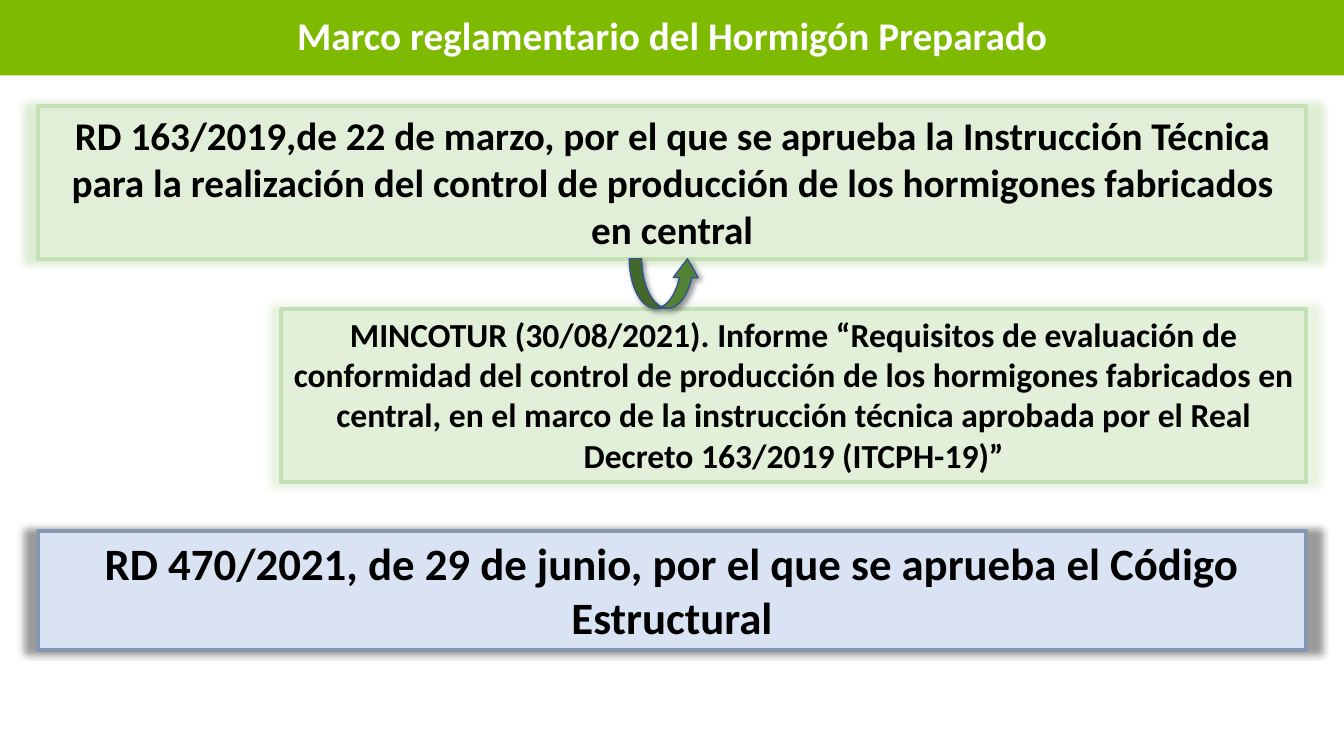
from lxml.etree import SubElement
from pptx import Presentation
from pptx.dml.color import RGBColor
from pptx.enum.shapes import MSO_SHAPE
from pptx.enum.text import MSO_ANCHOR, MSO_AUTO_SIZE, PP_ALIGN
from pptx.oxml.ns import qn
from pptx.util import Cm, Pt


def color(code):
    return RGBColor.from_string(code)


def block(kind, box, fill, line=None, width=0, glow=None, blur=5, **extra):
    shape = slide.shapes.add_shape(kind, *[Cm(n) for n in box])
    shape._element.remove(shape._element.find(qn("p:style")))
    shape.fill.solid()
    shape.fill.fore_color.rgb = color(fill)
    if line:
        shape.line.color.rgb = color(line)
        shape.line.width = Pt(width)
    else:
        shape.line.fill.background()
    shape.shadow.inherit = False
    if glow:
        effects = shape._element.spPr.find(qn("a:effectLst"))
        outer = SubElement(effects, qn("a:outerShdw"), blurRad=str(Pt(blur)), **extra)
        tint = SubElement(outer, qn("a:srgbClr"), val=glow)
        SubElement(tint, qn("a:alpha"), val="40000")
    return shape


deck = Presentation()
deck.slide_width, deck.slide_height = Cm(33.87), Cm(19.05)
slide = deck.slides.add_slide(deck.slide_layouts[6])

title = block(MSO_SHAPE.RECTANGLE, (0, 0, 33.87, 1.9), "7DBA00")
frame = title.text_frame
frame.word_wrap = True
frame.vertical_anchor = MSO_ANCHOR.MIDDLE
head = frame.paragraphs[0]
head.text = "Marco reglamentario del Hormigón Preparado"
head.line_spacing = 0.9
texts = [(head, 28, "FFFFFF")]

right = 32.92
rules = [
    (0.96, 2.67, 3.85, "E2F0D9", "C5E0B4", "A9D18E", 94, 28,
     "RD 163/2019,de 22 de marzo, por el que se aprueba la Instrucción Técnica "
     "para la realización del control de producción de los hormigones fabricados en central"),
    (7.09, 7.78, 4.37, "E2F0D9", "C5E0B4", "C5E0B4", 94, 24,
     "MINCOTUR (30/08/2021). Informe “Requisitos de evaluación de conformidad del control "
     "de producción de los hormigones fabricados en central, en el marco de la instrucción "
     "técnica aprobada por el Real Decreto 163/2019 (ITCPH-19)”"),
    (0.96, 13.38, 3, "DAE3F3", "8497B0", "000000", 100, 32,
     "RD 470/2021, de 29 de junio, por el que se aprueba el Código Estructural"),
]
for left, top, height, fill, line, glow, alpha, size, text in rules:
    rule = block(MSO_SHAPE.RECTANGLE, (left, top, right - left, height), fill, line, 3,
                 glow, sx="102000", sy="102000", algn="ctr", rotWithShape="0")
    if alpha < 100:
        tint = rule._element.spPr.find(qn("a:solidFill")).find(qn("a:srgbClr"))
        SubElement(tint, qn("a:alpha"), val=str(alpha * 1000))
    frame = rule.text_frame
    frame.word_wrap = True
    frame.auto_size = MSO_AUTO_SIZE.SHAPE_TO_FIT_TEXT
    frame.vertical_anchor = MSO_ANCHOR.TOP
    frame.paragraphs[0].text = text
    texts.append((frame.paragraphs[0], size, "000000"))

for para, size, ink in texts:
    para.alignment = PP_ALIGN.CENTER
    para.font.name = "Calibri"
    para.font.size = Pt(size)
    para.font.bold = True
    para.font.color.rgb = color(ink)

arrow = block(MSO_SHAPE.CURVED_UP_ARROW, (15.86, 6.52, 1.78, 1.25), "548235", "325491", 1,
              "000000", 4, dist=str(Pt(3)), dir="2700000", algn="tl", rotWithShape="0")
for i, value in enumerate((0.25, 0.5, 0.38)):
    arrow.adjustments[i] = value

deck.save("out.pptx")
